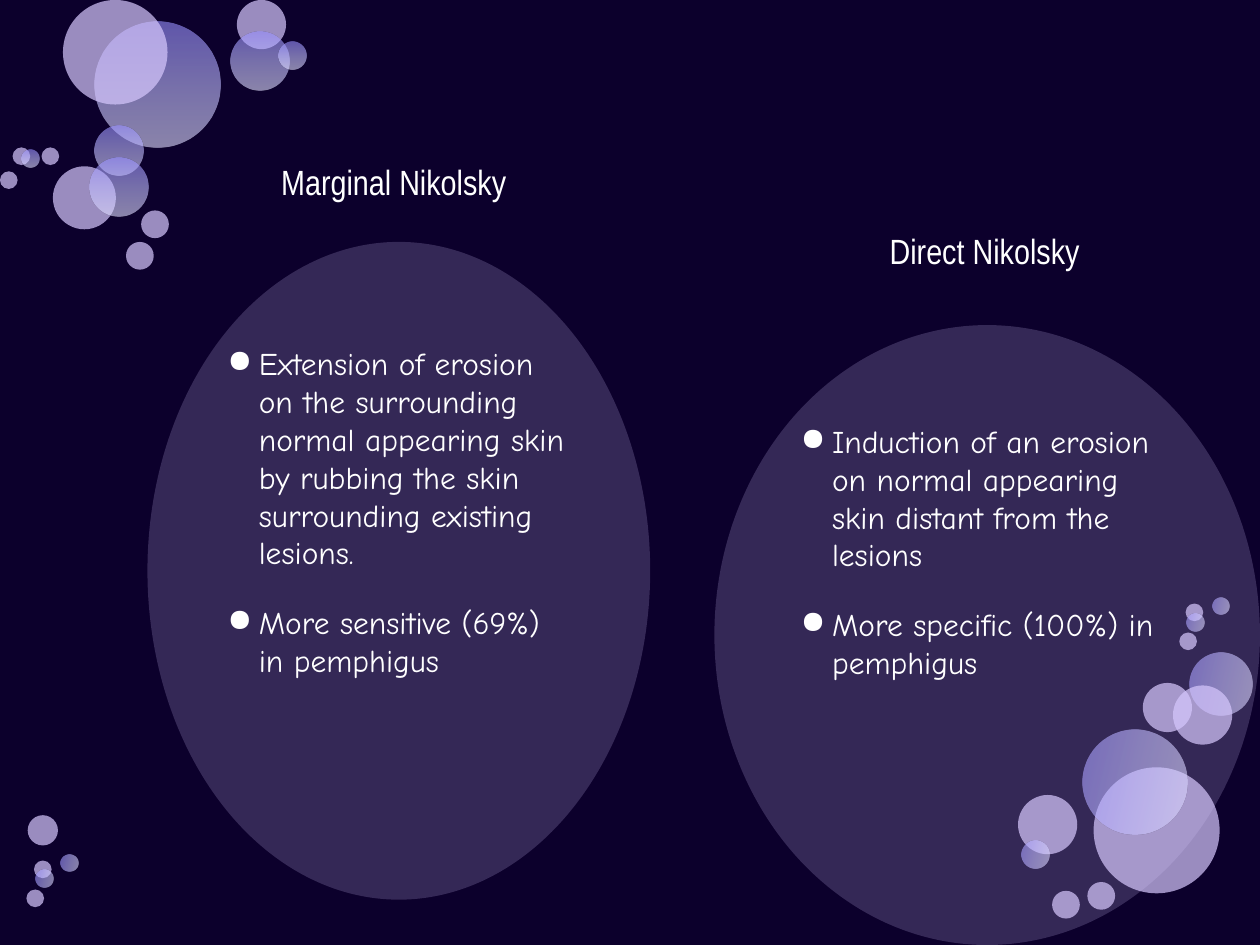
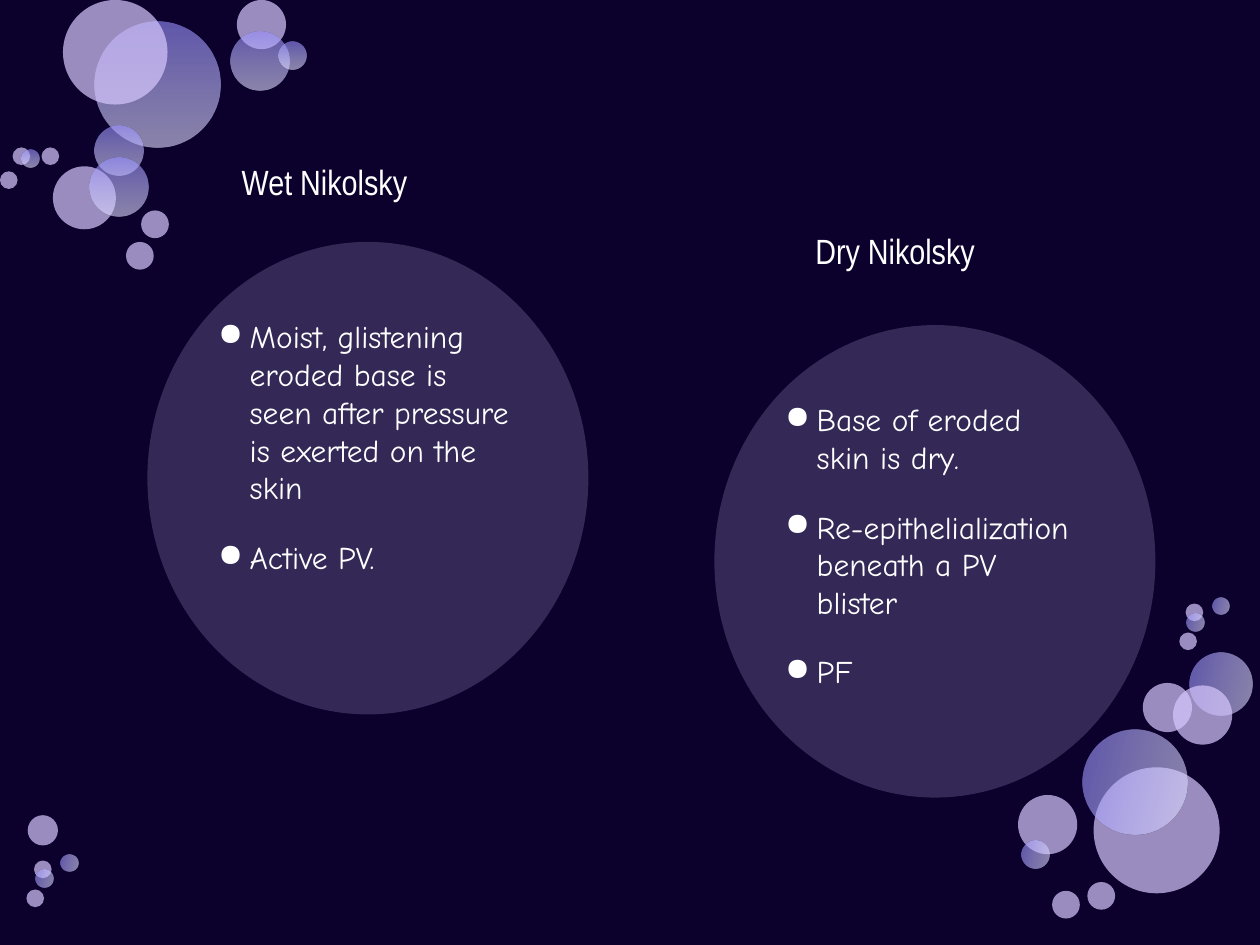
from lxml import etree
from pptx import Presentation
from pptx import util as u
from pptx.dml import color
from pptx.enum import shapes, text
from pptx.oxml import ns

HUES = {"night": "0C002C", "lilac": "D7C8FE", "white": "FFFFFF",
        "deep": "9890FF", "mid": "BFBBFF", "pale": "E0DEFF"}
GLOW = [(0, "deep"), (50, "mid"), (100, "pale")]
HEAD = {"size": u.Pt(20), "name": "Arial Narrow"}
BODY = {"size": u.Pt(18), "name": "Comic Neue"}
PAD = ("margin_left", "margin_top", "margin_right", "margin_bottom")

# Bubbles, back to front: left, top, diameter in inches, "g" glowing or "f" flat
TOP = [
    (0.75, 0.17, 1, "g"), (0.42, 1.32, 0.5, "f"), (0.75, 1, 0.39, "g"),
    (0.71, 1.25, 0.47, "g"), (0.5, 0, 0.83, "f"), (1.88, 0, 0.39, "f"),
    (1.83, 0.25, 0.47, "g"), (2.21, 0.33, 0.22, "g"), (1.12, 1.67, 0.22, "f"),
    (0.1, 1.17, 0.14, "f"), (1, 1.92, 0.22, "f"), (0, 1.36, 0.14, "f"),
    (0.17, 1.19, 0.14, "g"), (0.33, 1.17, 0.14, "f"),
]
LOW = [
    (8.68, 6.09, 1, "f"), (9.44, 5.18, 0.5, "g"), (9.07, 5.42, 0.39, "f"),
    (9.31, 5.44, 0.47, "f"), (8.59, 5.79, 0.83, "g"), (0.22, 6.47, 0.24, "f"),
    (8.08, 6.31, 0.47, "f"), (8.11, 6.67, 0.22, "g"), (8.35, 7.07, 0.22, "f"),
    (9.41, 4.79, 0.14, "f"), (8.63, 7, 0.22, "f"), (9.62, 4.74, 0.14, "g"),
    (9.42, 4.87, 0.14, "g"), (9.36, 5.02, 0.14, "f"), (0.27, 6.83, 0.14, "f"),
    (0.48, 6.78, 0.14, "g"), (0.28, 6.9, 0.14, "g"), (0.21, 7.06, 0.14, "f"),
]

# Per slide: title, title left, oval width, oval height, points
SLIDES = [
    [("Marginal Nikolsky", 1.25, 3.99, 5.22,
      ["Extension of erosion on the surrounding normal appearing skin by "
       "rubbing the skin surrounding existing lesions.",
       "More sensitive (69%) in pemphigus"]),
     ("Direct Nikolsky", 5.94, 4.33, 4.92,
      ["Induction of an erosion on normal appearing skin distant from the "
       "lesions",
       "More specific (100%) in pemphigus"])],
    [("Wet Nikolsky", 0.7, 3.5, 3.75,
      ["Moist, glistening eroded base is seen after pressure is exerted on "
       "the skin",
       "Active PV."]),
     ("Dry Nikolsky", 5.23, 3.5, 3.75,
      ["Base of eroded skin is dry.",
       "Re-epithelialization beneath a PV blister",
       "PF"])],
]
# Title top, oval left and oval top of the two columns
COLS = [(1.09, 1.17, 1.92), (1.64, 5.67, 2.58)]


def dist(inch):
    return u.Cm(inch * 2.54)


def put(item, vals):
    for key, val in vals.items():
        setattr(item, key, val)


def sub(node, tag, **attrs):
    return etree.SubElement(node, ns.qn(tag), attrs)


class Deck:
    def __init__(self):
        self.prs = Presentation()
        put(self.prs, {"slide_width": dist(10), "slide_height": dist(7.5)})
        self.paint(self.prs.slide_master.background.fill, "night")
        self.slide = None

    def paint(self, fill, hue):
        fill.solid()
        fill.fore_color.rgb = color.RGBColor.from_string(HUES[hue])

    def page(self):
        self.slide = self.prs.slides.add_slide(self.prs.slide_layouts[6])
        for group, turn in ((TOP, 90), (LOW, 13.3)):
            for x, y, size, kind in group:
                if kind == "g":
                    self.glow(x, y, size, turn)
                else:
                    self.oval(x, y, size, size, 70)

    def disc(self, *box):
        """Add an ellipse without line or shadow."""
        disc = self.slide.shapes.add_shape(
            shapes.MSO_SHAPE.OVAL, *map(dist, box))
        disc.shadow.inherit = False
        disc.line.fill.background()
        return disc

    def oval(self, x, y, w, h, alpha):
        oval = self.disc(x, y, w, h)
        self.paint(oval.fill, "lilac")
        tone = oval._element.spPr.find(".//" + ns.qn("a:srgbClr"))
        sub(tone, "a:alpha", val=str(alpha * 1000))
        return oval

    def glow(self, x, y, size, turn):
        disc = self.disc(x, y, size, size)
        disc.fill.gradient()
        grad = disc._element.spPr.find(ns.qn("a:gradFill"))
        for part in list(grad):
            grad.remove(part)
        stops = sub(grad, "a:gsLst")
        for pos, hue in GLOW:
            stop = sub(stops, "a:gs", pos=str(pos * 1000))
            tone = sub(stop, "a:srgbClr", val=HUES[hue])
            sub(tone, "a:alpha", val="60000")
        sub(grad, "a:lin", ang=str(round(turn * 60000)), scaled="0")

    def label(self, shape, lines, font, anchor, align):
        frame = shape.text_frame
        put(frame, {"word_wrap": True, "vertical_anchor": anchor,
                    **dict.fromkeys(PAD, dist(0.05))})
        frame.text = "\n".join(lines)
        for para in frame.paragraphs:
            put(para, {"alignment": align, "space_before": u.Pt(18)})
            run = para.runs[0]
            put(run.font, font)
            self.paint(run.font.fill, "white")
        return frame.paragraphs

    def title(self, words, x, y):
        box = self.slide.shapes.add_textbox(*map(dist, (x, y, 3.75, 0.7)))
        self.label(box, [words], HEAD, text.MSO_ANCHOR.MIDDLE,
                   text.PP_ALIGN.CENTER)

    def points(self, lines, *box):
        oval = self.oval(*box, 20)
        for para in self.label(oval, lines, BODY, text.MSO_ANCHOR.TOP,
                               text.PP_ALIGN.LEFT):
            props = para._p.get_or_add_pPr()
            props.set("marL", str(dist(0.25)))
            props.set("indent", str(-dist(0.25)))
            sub(props, "a:buChar", char="●")


def main():
    deck = Deck()
    for pair in SLIDES:
        deck.page()
        for (name, left, w, h, lines), (top, x, y) in zip(pair, COLS):
            deck.title(name, left, top)
            deck.points(lines, x, y, w, h)
    deck.prs.save("out.pptx")


if __name__ == "__main__":
    main()
